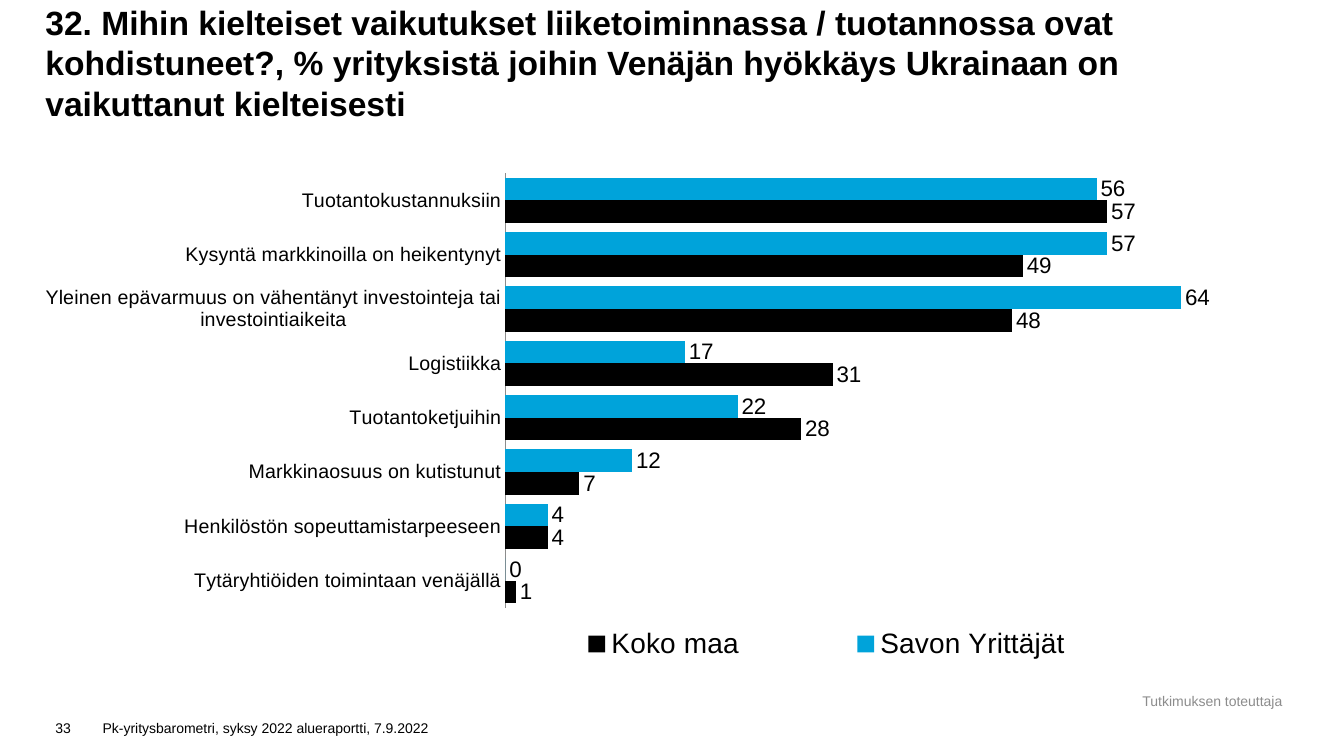
from lxml import etree
from pptx import Presentation
from pptx.chart.data import CategoryChartData
from pptx.dml.color import RGBColor
from pptx.enum.chart import XL_CHART_TYPE as ChartType, XL_LABEL_POSITION as LabelPosition
from pptx.enum.chart import XL_LEGEND_POSITION as LegendPosition, XL_TICK_MARK as TickMark
from pptx.enum.text import MSO_ANCHOR as Anchor, MSO_AUTO_SIZE as AutoSize, PP_ALIGN as Align
from pptx.oxml.ns import qn
from pptx.util import Inches, Pt

COLORS = {"text": "000000", "muted": "8C8C8C", "region": "00A3DA", "country": "000000", "axis": "8C8C8C"}


def style_font(font, size, color="text", bold=False):
    font.name = "Arial"
    font.size = Pt(size)
    font.bold = bold
    font.color.rgb = RGBColor.from_string(COLORS[color])


def set_layout(parent, index, target, bounds):
    for old in parent.findall(qn("c:layout")):
        parent.remove(old)
    layout = etree.Element(qn("c:layout"))
    manual = etree.SubElement(layout, qn("c:manualLayout"))
    settings = [("layoutTarget", target)] if target else []
    settings += [("xMode", "edge"), ("yMode", "edge")] + list(zip("xywh", bounds))
    for tag, value in settings:
        etree.SubElement(manual, qn(f"c:{tag}")).set("val", str(value))
    parent.insert(index, layout)


presentation = Presentation()
presentation.slide_width = Inches(13.33)
presentation.slide_height = Inches(7.5)
slide = presentation.slides.add_slide(presentation.slide_layouts[5])

title = slide.shapes.title
title.left, title.top, title.width, title.height = Inches(0.45), Inches(0), Inches(12.3), Inches(1.22)
frame = title.text_frame
frame.text = (
    "32. Mihin kielteiset vaikutukset liiketoiminnassa / tuotannossa ovat kohdistuneet?, "
    "% yrityksistä joihin Venäjän hyökkäys Ukrainaan on vaikuttanut kielteisesti"
)
frame.word_wrap = True
frame.auto_size = AutoSize.NONE
frame.vertical_anchor = Anchor.BOTTOM
frame.margin_left = frame.margin_top = frame.margin_right = frame.margin_bottom = 0
frame.paragraphs[0].alignment = Align.LEFT
style_font(frame.paragraphs[0].runs[0].font, 24, bold=True)

footers = [
    ("Tutkimuksen toteuttaja", 11.16, 6.82, 1.73, 0.26, Align.CENTER, Anchor.MIDDLE, "muted"),
    ("Pk-yritysbarometri, syksy 2022 alueraportti, 7.9.2022", 0.92, 7, 4.17, 0.35, Align.LEFT, Anchor.BOTTOM, "text"),
    ("33", 0.45, 7, 0.47, 0.35, Align.LEFT, Anchor.BOTTOM, "text"),
]
for text, left, top, width, height, alignment, anchor, color in footers:
    box = slide.shapes.add_textbox(Inches(left), Inches(top), Inches(width), Inches(height))
    frame = box.text_frame
    frame.text = text
    frame.word_wrap = True
    frame.vertical_anchor = anchor
    frame.paragraphs[0].alignment = alignment
    style_font(frame.paragraphs[0].runs[0].font, 10, color)

chart_data = CategoryChartData(number_format="#,##0")
chart_data.categories = [
    "Tuotantokustannuksiin",
    "Kysyntä markkinoilla on heikentynyt",
    "Yleinen epävarmuus on vähentänyt investointeja tai investointiaikeita",
    "Logistiikka",
    "Tuotantoketjuihin",
    "Markkinaosuus on kutistunut",
    "Henkilöstön sopeuttamistarpeeseen",
    "Tytäryhtiöiden toimintaan venäjällä",
]
chart_data.add_series("Savon Yrittäjät", [56, 57, 64, 17, 22, 12, 4, 0])
chart_data.add_series("Koko maa", [57, 49, 48, 31, 28, 7, 4, 1])
chart = slide.shapes.add_chart(
    ChartType.BAR_CLUSTERED, Inches(0.45), Inches(1.55), Inches(12.3), Inches(5.12), chart_data
).chart
chart.has_title = False
style_font(chart.font, 20)

category_axis = chart.category_axis
category_axis.reverse_order = True
category_axis.major_tick_mark = category_axis.minor_tick_mark = TickMark.NONE
category_axis.format.line.color.rgb = RGBColor.from_string(COLORS["axis"])
category_axis.format.line.width = Pt(0.75)
style_font(category_axis.tick_labels.font, 14)

value_axis = chart.value_axis
value_axis.minimum_scale = 0
value_axis.maximum_scale = 70
value_axis.has_major_gridlines = False
value_axis.visible = False

plot = chart.plots[0]
plot.gap_width = 40
plot.overlap = 0
plot.vary_by_categories = False
for series, color in zip(plot.series, ("region", "country")):
    series.invert_if_negative = False
    series.format.fill.solid()
    series.format.fill.fore_color.rgb = RGBColor.from_string(COLORS[color])
    labels = series.data_labels
    labels.show_value = True
    labels.position = LabelPosition.OUTSIDE_END
    labels.number_format = "#,##0"
    labels.number_format_is_linked = False
    style_font(labels.font, 16)

chart.has_legend = True
legend = chart.legend
legend.position = LegendPosition.RIGHT
legend.include_in_layout = False
style_font(legend.font, 20)

chart_element = chart.element.find(qn("c:chart"))
set_layout(chart_element.find(qn("c:plotArea")), 0, "inner", (0.371, 0.033, 0.596, 0.842))
set_layout(chart_element.find(qn("c:legend")), 1, None, (0.35, 0.9, 0.56, 0.09))

presentation.save("out.pptx")
